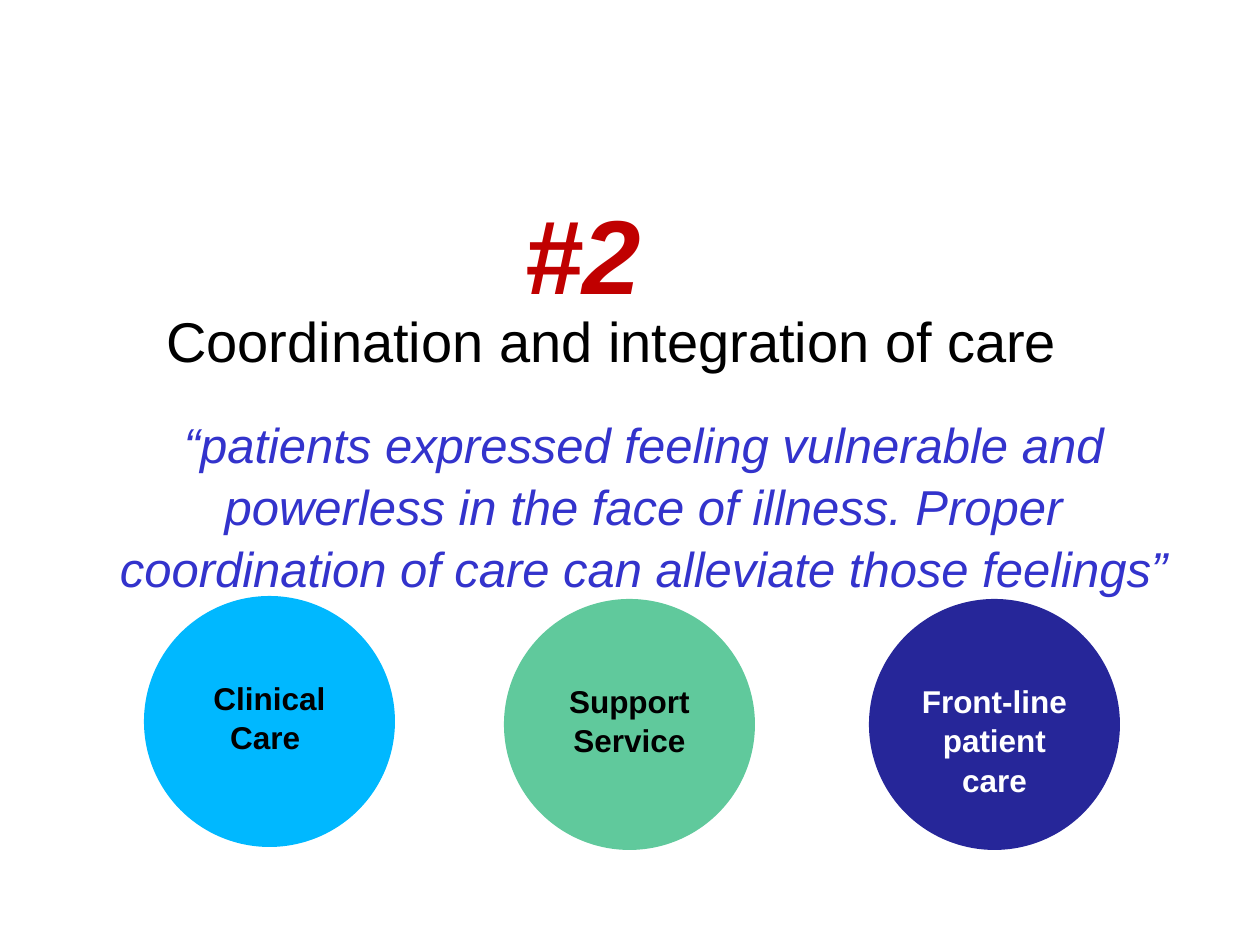
from pptx import Presentation
from pptx.dml.color import RGBColor
from pptx.enum.shapes import MSO_SHAPE
from pptx.enum.text import MSO_ANCHOR, PP_ALIGN
from pptx.util import Pt

EMU_PER_PX = 914400 / 126
BLACK = RGBColor(0x00, 0x00, 0x00)
WHITE = RGBColor(0xFF, 0xFF, 0xFF)
RED = RGBColor(0xC0, 0x00, 0x00)
QUOTE_BLUE = RGBColor(0x33, 0x33, 0xCC)
SKY = RGBColor(0x00, 0xB8, 0xFF)
GREEN = RGBColor(0x60, 0xC9, 0x9C)
NAVY = RGBColor(0x26, 0x26, 0x99)


def px(length):
    return round(length * EMU_PER_PX)


class SlideBuilder:
    font_name = "Arial"
    line_spacing = 1.05
    box_margin_top = 9
    circle_margin_top = 44
    circle_size = 251

    def __init__(self, slide):
        self.slide = slide

    def set_text(self, shape, text, size, color, margin_top,
                 align=PP_ALIGN.CENTER, bold=False, italic=False):
        text_frame = shape.text_frame
        text_frame.word_wrap = True
        text_frame.vertical_anchor = MSO_ANCHOR.TOP
        text_frame.margin_top = px(margin_top)
        text_frame.text = text
        paragraph = text_frame.paragraphs[0]
        paragraph.alignment = align
        paragraph.line_spacing = self.line_spacing
        font = paragraph.runs[0].font
        font.name = self.font_name
        font.size = Pt(size)
        font.bold = bold
        font.italic = italic
        font.color.rgb = color

    def text_box(self, left, top, width, height, text, size, color, **style):
        shape = self.slide.shapes.add_textbox(
            px(left), px(top), px(width), px(height))
        self.set_text(shape, text, size, color, self.box_margin_top, **style)

    def circle(self, left, top, text, fill, color):
        shape = self.slide.shapes.add_shape(
            MSO_SHAPE.OVAL, px(left), px(top),
            px(self.circle_size), px(self.circle_size))
        shape.shadow.inherit = False
        shape.fill.solid()
        shape.fill.fore_color.rgb = fill
        shape.line.fill.background()
        self.set_text(shape, text, 18, color, self.circle_margin_top, bold=True)


def main():
    presentation = Presentation()
    presentation.slide_width = px(1260)
    presentation.slide_height = px(945)
    builder = SlideBuilder(
        presentation.slides.add_slide(presentation.slide_layouts[6]))

    builder.text_box(101, 294, 1022, 149,
                     "Coordination and integration of care", 32, BLACK)
    builder.text_box(512, 174, 238, 140, "#2", 60, RED,
                     align=PP_ALIGN.LEFT, bold=True, italic=True)
    builder.text_box(
        101, 403, 1085, 190,
        "“patients expressed feeling vulnerable and powerless in the face of "
        "illness. Proper coordination of care can alleviate those feelings”",
        28, QUOTE_BLUE, italic=True)

    for left, top, text, fill, color in (
        (144, 596, "Clinical Care ", SKY, BLACK),
        (504, 599, "Support Service", GREEN, BLACK),
        (869, 599, "Front-line patient care", NAVY, WHITE),
    ):
        builder.circle(left, top, text, fill, color)

    presentation.save("out.pptx")


if __name__ == "__main__":
    main()
